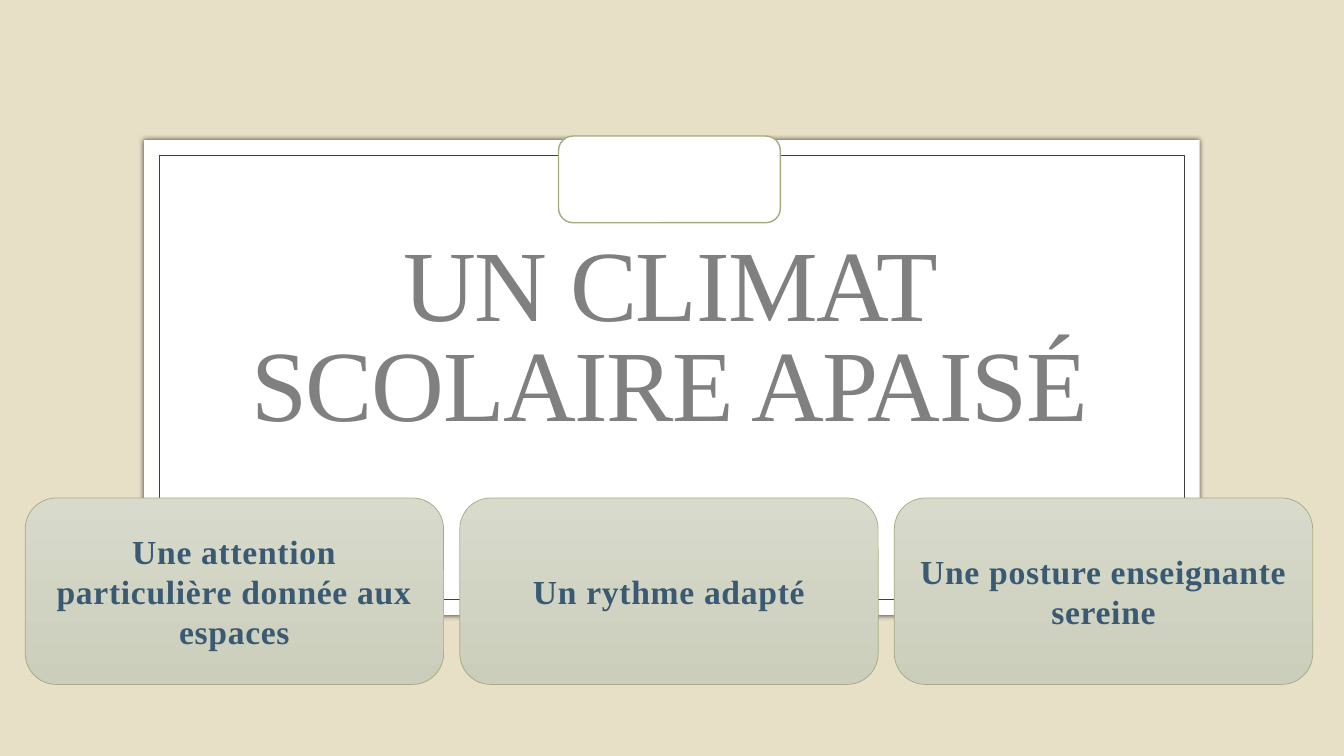
import pptx
import pptx.util
import pptx.dml.color
import pptx.enum.shapes
import pptx.enum.text
import pptx.oxml
import pptx.oxml.ns

Inches = pptx.util.Inches
Pt = pptx.util.Pt
KIND = pptx.enum.shapes.MSO_SHAPE


def color(code):
    return pptx.dml.color.RGBColor.from_string(code)


def glow(alpha, blur, dist, code):
    space = pptx.oxml.ns.nsdecls("a")
    return pptx.oxml.parse_xml(
        f'<a:effectLst {space}><a:outerShdw blurRad="{Pt(blur)}" '
        f'dist="{Pt(dist)}" dir="2700000" algn="tl" rotWithShape="0">'
        f'<a:srgbClr val="{code}"><a:alpha val="{alpha * 1000}"/></a:srgbClr>'
        f'</a:outerShdw></a:effectLst>')


class Deck:
    font = "Times New Roman"
    paper = "FFFFFF"
    sage = "A5AB81"
    ink = "3A5A73"
    edge = "92B0C8"
    grad = ("D8DBCC", "CBCEBA")

    def __init__(self, show):
        self.slide = show.slides.add_slide(show.slide_layouts[5])
        fill = self.slide.background.fill
        fill.solid()
        fill.fore_color.rgb = color("E7E0C7")

    def shape(self, kind, box, fill=None, line=None, width=0.5):
        item = self.slide.shapes.add_shape(kind, *map(Inches, box))
        item.shadow.inherit = False
        if fill:
            item.fill.solid()
            item.fill.fore_color.rgb = color(fill)
        else:
            item.fill.background()
        if line:
            item.line.color.rgb = color(line)
            item.line.width = Pt(width)
        else:
            item.line.fill.background()
        return item

    def label(self, item, text, size, code, gap, bold=False):
        frame = item.text_frame
        frame.text = text
        frame.word_wrap = True
        frame.auto_size = pptx.enum.text.MSO_AUTO_SIZE.NONE
        frame.vertical_anchor = pptx.enum.text.MSO_ANCHOR.MIDDLE
        para = frame.paragraphs[0]
        para.alignment = pptx.enum.text.PP_ALIGN.CENTER
        run = para.runs[0]
        run.font.name = self.font
        run.font.size = Pt(size)
        run.font.bold = bold
        run.font.color.rgb = color(code)
        run.font._element.set("spc", str(int(gap * 100)))
        return para

    def sheet(self):
        card = self.shape(KIND.RECTANGLE, (1.43, 1.39, 10.47, 4.71), self.paper)
        props = card._element.spPr
        props.remove(props.find(pptx.oxml.ns.qn("a:effectLst")))
        props.append(glow(66, 4, 0, "000000"))
        self.shape(KIND.RECTANGLE, (1.58, 1.54, 10.17, 4.41), line="404040")

    def title(self, text, box):
        item = self.slide.shapes.title
        item.left, item.top, item.width, item.height = map(Inches, box)
        para = self.label(item, text, 72, "808080", -1)
        para.line_spacing = 0.83
        self.slide.shapes._spTree.append(item._element)

    def card(self, text, box):
        item = self.shape(KIND.ROUNDED_RECTANGLE, box, line=self.sage)
        item.fill.gradient()
        item.fill.gradient_angle = 270
        for stop, code in zip(item.fill.gradient_stops, self.grad):
            stop.color.rgb = color(code)
        para = self.label(item, text, 24, self.ink, 0.5, True)
        props = para.runs[0].font._element
        space = pptx.oxml.ns.nsdecls("a")
        props.insert(0, pptx.oxml.parse_xml(
            f'<a:ln {space} w="{Pt(0.75)}"><a:solidFill>'
            f'<a:srgbClr val="{self.edge}"/></a:solidFill></a:ln>'))
        latin = props.find(pptx.oxml.ns.qn("a:latin"))
        latin.addprevious(glow(60, 1, 1, self.edge))

    def tab(self, box):
        self.shape(KIND.ROUNDED_RECTANGLE, box, self.paper, self.sage, 1)


def main():
    show = pptx.Presentation()
    show.slide_width = Inches(13.33)
    show.slide_height = Inches(7.5)
    deck = Deck(show)
    deck.sheet()
    deck.title("UN CLIMAT SCOLAIRE APAISÉ", (1.68, 2.59, 9.92, 1.59))
    themes = ("Une attention particulière donnée aux espaces",
              "Un rythme adapté",
              "Une posture enseignante sereine")
    for i, theme in enumerate(themes):
        deck.card(theme, (0.25 + 4.31 * i, 4.94, 4.15, 1.85))
    deck.tab((5.54, 1.35, 2.2, 0.86))
    show.save("out.pptx")


if __name__ == "__main__":
    main()
